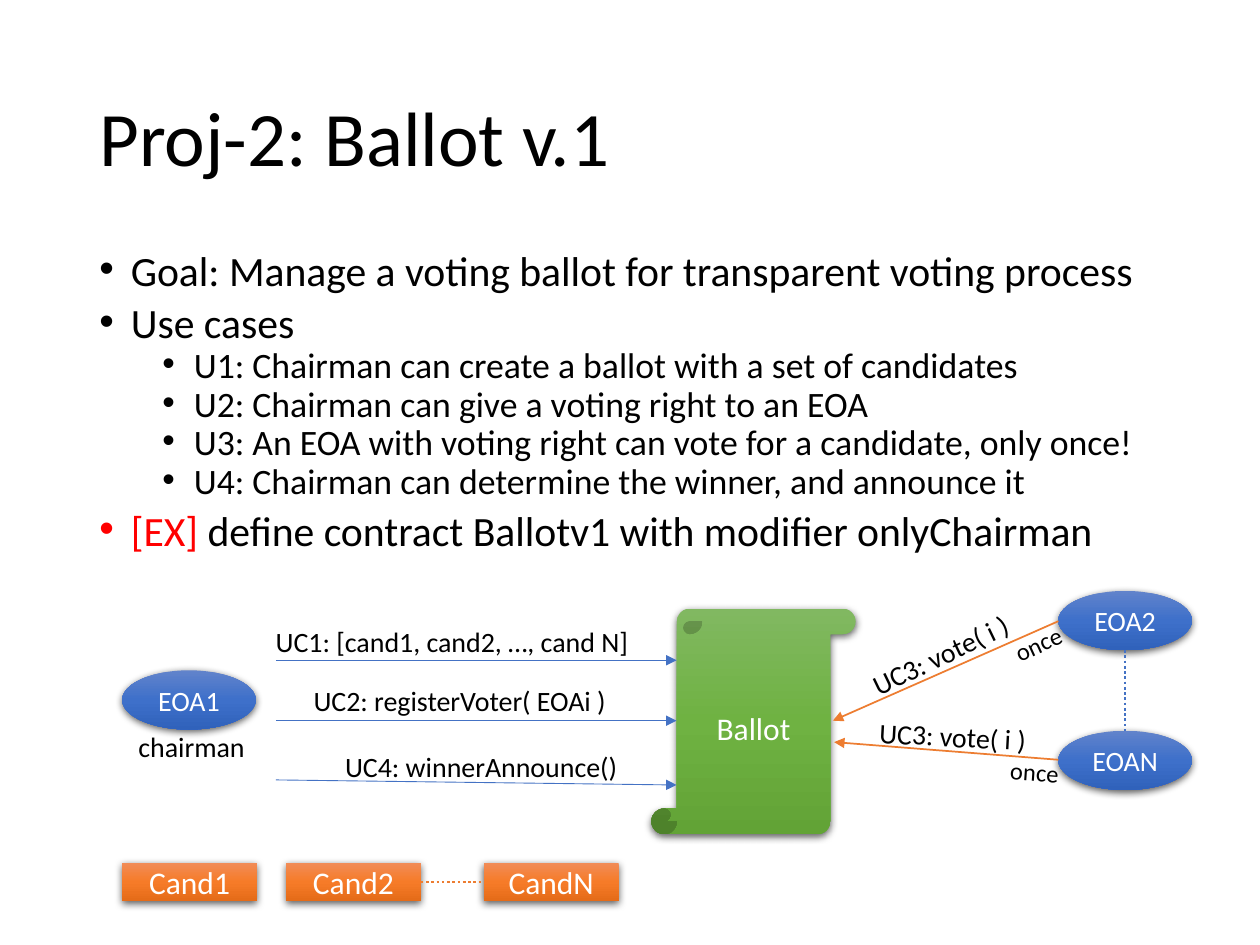
import copy
import lxml.etree
import pptx
import pptx.dml.color
import pptx.enum.dml
import pptx.enum.shapes
import pptx.enum.text
import pptx.oxml.ns
import pptx.util

RGBColor = pptx.dml.color.RGBColor
BLACK = RGBColor(0x00, 0x00, 0x00)
WHITE = RGBColor(0xFF, 0xFF, 0xFF)
RED = RGBColor(0xFF, 0x00, 0x00)
BLUE = RGBColor(0x44, 0x72, 0xC4)
ORANGE = RGBColor(0xED, 0x7D, 0x31)
BLUES = [RGBColor(0x61, 0x83, 0xCB), RGBColor(0x3E, 0x70, 0xCA), RGBColor(0x30, 0x62, 0xBB)]
GREENS = [RGBColor(0x81, 0xB8, 0x61), RGBColor(0x6F, 0xB2, 0x42), RGBColor(0x62, 0xA3, 0x36)]
AMBERS = [RGBColor(0xF1, 0x8C, 0x57), RGBColor(0xF6, 0x7B, 0x28), RGBColor(0xE5, 0x6C, 0x19)]

SHAPE = pptx.enum.shapes.MSO_SHAPE
ALIGN = pptx.enum.text.PP_ALIGN
ANCHOR = pptx.enum.text.MSO_ANCHOR
FIT = pptx.enum.text.MSO_AUTO_SIZE
DOT = pptx.enum.dml.MSO_LINE.ROUND_DOT
qn = pptx.oxml.ns.qn
COLS, ROWS = 100, 75


class Deck:
    font = "Calibri"

    def __init__(self):
        self.prs = pptx.Presentation()
        self.prs.slide_width = pptx.util.Inches(10)
        self.prs.slide_height = pptx.util.Inches(7.5)
        self.slide = self.prs.slides.add_slide(self.prs.slide_layouts[5])

    def place(self, x, y, *more):
        wide, high = self.prs.slide_width / COLS, self.prs.slide_height / ROWS
        return [round(n * unit) for n, unit in zip((x, y, *more), (wide, high) * 2)]

    def run(self, para, text, size, color=BLACK):
        run = para.add_run()
        run.text = text
        run.font.name = self.font
        run.font.size = pptx.util.Pt(size)
        run.font.color.rgb = color

    def title(self, box, text):
        head = self.slide.shapes.title
        head.left, head.top, head.width, head.height = self.place(*box)
        frame = head.text_frame
        frame.vertical_anchor = ANCHOR.MIDDLE
        para = frame.paragraphs[0]
        para.alignment = ALIGN.LEFT
        para.line_spacing = 0.9
        self.run(para, text, 44)

    def bullets(self, box, items):
        frame = self.slide.shapes.add_textbox(*self.place(*box)).text_frame
        frame.word_wrap = True
        for i, (level, runs) in enumerate(items):
            para = frame.add_paragraph() if i else frame.paragraphs[0]
            para.level = level
            para.line_spacing = 0.7
            para.space_before = pptx.util.Pt(5 if level else 10)
            props = para._p.get_or_add_pPr()
            props.set("marL", str(pptx.util.Inches(0.25 + 0.5 * level)))
            props.set("indent", str(pptx.util.Inches(-0.25)))
            lxml.etree.SubElement(props, qn("a:buFont"), typeface="Arial")
            lxml.etree.SubElement(props, qn("a:buChar"), char="•")
            for text, color in runs:
                self.run(para, text, 20.4 if level else 23.8, color)

    def label(self, box, text, size=16, turn=0):
        shape = self.slide.shapes.add_textbox(*self.place(*box))
        shape.rotation = turn
        frame = shape.text_frame
        frame.word_wrap = False
        frame.auto_size = FIT.SHAPE_TO_FIT_TEXT
        self.run(frame.paragraphs[0], text, size)

    def shade(self, shape, colors):
        fill = shape.fill
        fill.gradient()
        fill.gradient_angle = 270
        stops = next(shape._element.iter(qn("a:gsLst")))
        stops.append(copy.deepcopy(stops[0]))
        for i, (stop, color) in enumerate(zip(fill.gradient_stops, colors)):
            stop.position = i / 2
            stop.color.rgb = color

    def cast(self, shape):
        shape.shadow.inherit = False
        effect = next(shape._element.iter(qn("a:effectLst")))
        outer = lxml.etree.SubElement(
            effect, qn("a:outerShdw"), blurRad=str(pptx.util.Pt(4.5)),
            dist=str(pptx.util.Pt(1.5)), dir="5400000", algn="ctr", rotWithShape="0")
        black = lxml.etree.SubElement(outer, qn("a:srgbClr"), val=str(BLACK))
        lxml.etree.SubElement(black, qn("a:alpha"), val="63000")

    def node(self, kind, box, text, colors, size=18):
        shape = self.slide.shapes.add_shape(kind, *self.place(*box))
        self.shade(shape, colors)
        shape.line.fill.background()
        self.cast(shape)
        frame = shape.text_frame
        frame.vertical_anchor = ANCHOR.MIDDLE
        para = frame.paragraphs[0]
        para.alignment = ALIGN.CENTER
        self.run(para, text, size, WHITE)

    def line(self, start, end, color, width, dash=None):
        line = self.slide.shapes.add_connector(
            pptx.enum.shapes.MSO_CONNECTOR.STRAIGHT, *self.place(*start), *self.place(*end))
        line.line.color.rgb = color
        line.line.width = pptx.util.Pt(width)
        if dash:
            line.line.dash_style = dash
        else:
            lxml.etree.SubElement(line.line._ln, qn("a:tailEnd"), type="triangle")
        lxml.etree.SubElement(line._element.spPr, qn("a:effectLst"))


def main():
    deck = Deck()
    deck.title((6.9, 4, 86.2, 14.5), "Proj-2: Ballot v.1")
    deck.bullets((6.9, 20, 86.2, 25.5), [
        (0, [("Goal: Manage a voting ballot for transparent voting process", BLACK)]),
        (0, [("Use cases", BLACK)]),
        (1, [("U1: Chairman can create a ballot with a set of candidates", BLACK)]),
        (1, [("U2: Chairman can give a voting right to an EOA", BLACK)]),
        (1, [("U3: An EOA with voting right can vote for a candidate, only once!", BLACK)]),
        (1, [("U4: Chairman can determine the winner, and announce it", BLACK)]),
        (0, [("[EX]", RED), (" define contract Ballotv1 with modifier onlyChairman", BLACK)]),
    ])

    deck.node(SHAPE.VERTICAL_SCROLL, (51.7, 48.3, 16.2, 17.9), "Ballot", GREENS)
    for x, y, name in [(9.7, 53.2, "EOA1"), (84, 46.9, "EOA2"), (84, 58, "EOAN")]:
        deck.node(SHAPE.OVAL, (x, y, 10.6, 4.7), name, BLUES, 16)
    for x, name in [(9.7, "Cand1"), (22.7, "Cand2"), (38.4, "CandN")]:
        deck.node(SHAPE.RECTANGLE, (x, 68.5, 10.7, 3), name, AMBERS)

    for y, end in [(52.4, 52.4), (57.2, 57.2), (61.9, 62.3)]:
        deck.line((21.9, y), (53.7, end), BLUE, 0.5)
    for start, end in [((84, 49.3), (66.1, 57.2)), ((84, 60.3), (66.2, 58.9))]:
        deck.line(start, end, ORANGE, 1)
    deck.line((33.4, 70), (38.4, 70), ORANGE, 1.5, DOT)
    deck.line((89.3, 51.6), (89.3, 58), BLUE, 1.5, DOT)

    deck.label((10, 57.4, 10.5, 3.7), "chairman")
    deck.label((20.9, 49.1, 30.3, 3.7), "UC1: [cand1, cand2, …, cand N]")
    deck.label((23.9, 53.8, 26.2, 3.7), "UC2: registerVoter( EOAi )")
    deck.label((26.4, 59, 23.9, 3.7), "UC4: winnerAnnounce()")
    for x, y, turn in [(67.8, 50.1, 334.2), (68.8, 56.6, 3.2)]:
        deck.label((x, y, 13.8, 3.7), "UC3: vote( i )", 16, turn)
    for x, y, turn in [(79.5, 49.4, 335.5), (79.2, 59.6, 4)]:
        deck.label((x, y, 5.9, 3.4), "once", 14, turn)

    deck.prs.save("out.pptx")


if __name__ == "__main__":
    main()
